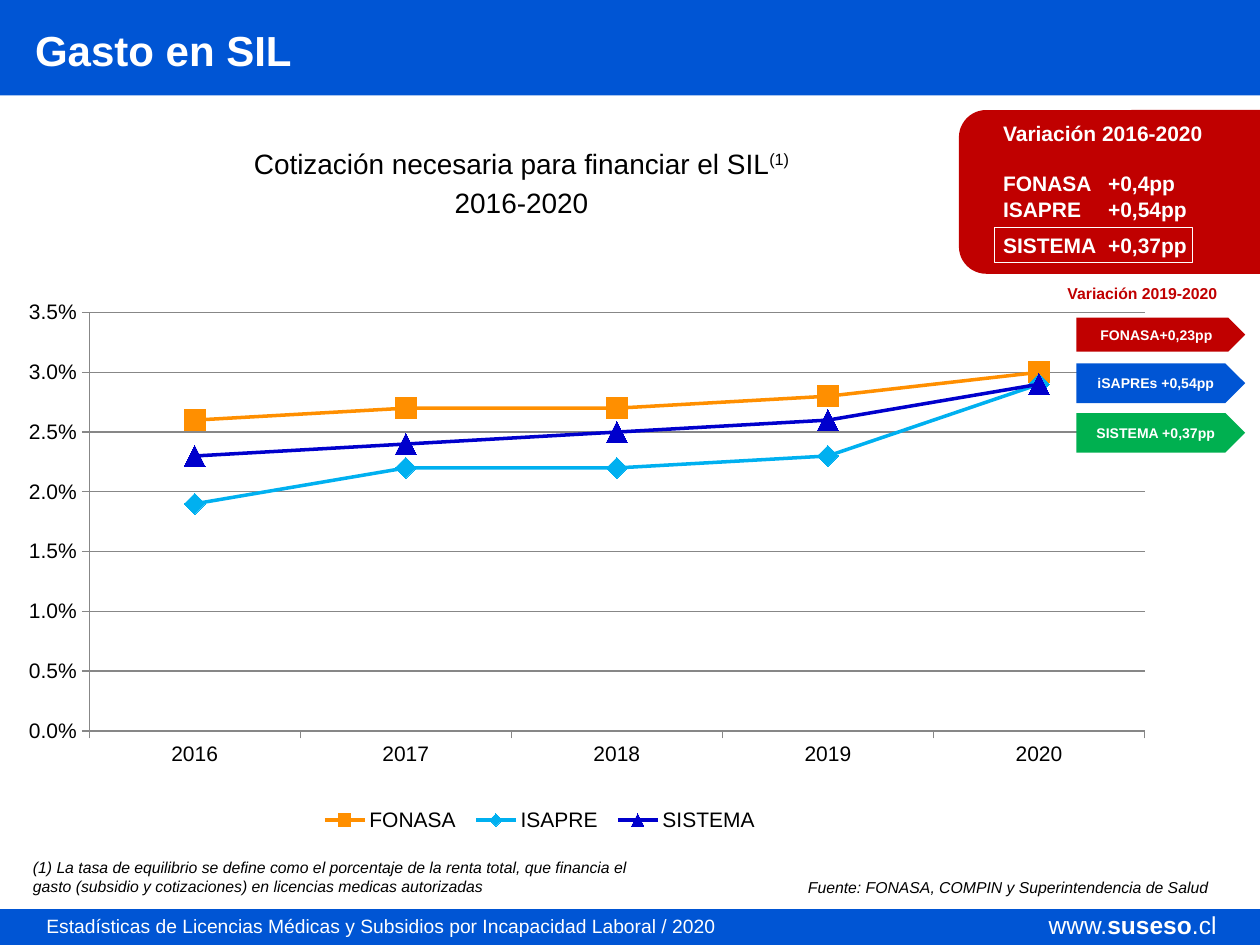
from dataclasses import dataclass

from lxml import etree
from pptx import Presentation
from pptx.chart.data import CategoryChartData
from pptx.dml.color import RGBColor
from pptx.enum.chart import XL_CHART_TYPE, XL_LEGEND_POSITION, XL_MARKER_STYLE, XL_TICK_MARK
from pptx.enum.shapes import MSO_SHAPE
from pptx.enum.text import MSO_ANCHOR, MSO_AUTO_SIZE, PP_ALIGN
from pptx.oxml.ns import qn
from pptx.util import Pt

LEFT, CENTER = PP_ALIGN.LEFT, PP_ALIGN.CENTER
TOP, MIDDLE = MSO_ANCHOR.TOP, MSO_ANCHOR.MIDDLE
RECTANGLE, PENTAGON = MSO_SHAPE.RECTANGLE, MSO_SHAPE.PENTAGON
ROUNDED_TOP = MSO_SHAPE.ROUND_2_SAME_RECTANGLE
SQUARE, DIAMOND, TRIANGLE = (
    XL_MARKER_STYLE.SQUARE, XL_MARKER_STYLE.DIAMOND, XL_MARKER_STYLE.TRIANGLE)

FONT = "Arial"
COLORS = {
    "blue": "0055D4", "red": "C00000", "green": "00B050",
    "white": "FFFFFF", "black": "000000", "grey": "878787",
    "orange": "FF8F00", "sky": "00B0F0", "navy": "0000CC",
}


@dataclass
class Box:
    left: float
    top: float
    width: float
    height: float

    def lengths(self):
        return Pt(self.left), Pt(self.top), Pt(self.width), Pt(self.height)


@dataclass
class Series:
    name: str
    color: str
    marker: object
    values: tuple


@dataclass
class Arrow:
    text: str
    color: str
    top: float
    height: float


SERIES = [
    Series("FONASA", "orange", SQUARE, (0.026, 0.027, 0.027, 0.028, 0.03)),
    Series("ISAPRE", "sky", DIAMOND, (0.019, 0.022, 0.022, 0.023, 0.029)),
    Series("SISTEMA", "navy", TRIANGLE, (0.023, 0.024, 0.025, 0.026, 0.029)),
]
ARROWS = [
    Arrow("FONASA+0,23pp", "red", 181.5, 19.5),
    Arrow("iSAPREs +0,54pp", "blue", 207.7, 22.6),
    Arrow("SISTEMA +0,37pp", "green", 236, 22.6),
]
VARIATIONS = [
    ("FONASA\t+0,4pp", 14, 0),
    ("ISAPRE\t+0,54pp", 0.5, 6),
    ("SISTEMA\t+0,37pp", 0, 0),
]


def rgb(name: str) -> RGBColor:
    return RGBColor.from_string(COLORS[name])


def write(paragraph, text: str, *, size=12, color="black", bold=False, italic=False,
          superscript=False, align=LEFT, before=0, after=0):
    paragraph.alignment = align
    paragraph.space_before, paragraph.space_after = Pt(before), Pt(after)
    run = paragraph.add_run()
    run.text = text
    font = run.font
    font.name, font.size, font.bold, font.italic = FONT, Pt(size), bold, italic
    font.color.rgb = rgb(color)
    if superscript:
        run._r.get_or_add_rPr().set("baseline", "30000")


def add_text_box(slide, box: Box):
    frame = slide.shapes.add_textbox(*box.lengths()).text_frame
    frame.word_wrap = True
    return frame


def place(placeholder, box: Box, anchor):
    placeholder.left, placeholder.top, placeholder.width, placeholder.height = box.lengths()
    frame = placeholder.text_frame
    frame.auto_size = MSO_AUTO_SIZE.NONE
    frame.vertical_anchor = anchor
    return frame


def add_shape(slide, kind, box: Box, fill=None, line=None):
    shape = slide.shapes.add_shape(kind, *box.lengths())
    shape.shadow.inherit = False
    if fill:
        shape.fill.solid()
        shape.fill.fore_color.rgb = rgb(fill)
    else:
        shape.fill.background()
    if line:
        shape.line.color.rgb = rgb(line)
        shape.line.width = Pt(0.5)
    else:
        shape.line.fill.background()
    return shape


def remove_bullet(paragraph):
    properties = paragraph._p.get_or_add_pPr()
    properties.set("marL", "0")
    properties.set("indent", "0")
    etree.SubElement(properties, qn("a:buNone"))


def add_tab(paragraph, position: float):
    tabs = etree.SubElement(paragraph._p.get_or_add_pPr(), qn("a:tabLst"))
    etree.SubElement(tabs, qn("a:tab"), pos=str(Pt(position)), algn="l")


def set_layout(parent, index: int, fractions: dict, inner=False):
    for existing in parent.findall(qn("c:layout")):
        parent.remove(existing)
    layout = etree.Element(qn("c:layout"))
    parent.insert(index, layout)
    manual = etree.SubElement(layout, qn("c:manualLayout"))
    if inner:
        etree.SubElement(manual, qn("c:layoutTarget"), val="inner")
    for mode in ("xMode", "yMode"):
        etree.SubElement(manual, qn(f"c:{mode}"), val="edge")
    for key, value in fractions.items():
        etree.SubElement(manual, qn(f"c:{key}"), val=str(value))


def add_line_chart(slide, box: Box):
    data = CategoryChartData(number_format="0.0%")
    data.categories = ["2016", "2017", "2018", "2019", "2020"]
    for item in SERIES:
        data.add_series(item.name, item.values)
    chart = slide.shapes.add_chart(XL_CHART_TYPE.LINE_MARKERS, *box.lengths(), data).chart
    chart.font.name, chart.font.size = FONT, Pt(12)
    chart.font.color.rgb = rgb("black")
    chart.has_title = False
    chart.has_legend = True
    chart.legend.position = XL_LEGEND_POSITION.BOTTOM
    chart.legend.include_in_layout = False
    chart.plots[0].vary_by_categories = False

    value_axis = chart.value_axis
    value_axis.minimum_scale, value_axis.maximum_scale = 0, 0.035
    value_axis.major_unit = 0.005
    value_axis.tick_labels.number_format = "0.0%"
    value_axis.tick_labels.number_format_is_linked = False
    value_axis.has_major_gridlines = True
    for axis in (chart.category_axis, value_axis):
        axis.major_tick_mark = XL_TICK_MARK.OUTSIDE
    for line in (value_axis.major_gridlines.format.line, value_axis.format.line,
                 chart.category_axis.format.line):
        line.color.rgb = rgb("grey")
        line.width = Pt(0.75)

    for series, item in zip(chart.plots[0].series, SERIES):
        series.smooth = False
        series.format.line.color.rgb = rgb(item.color)
        series.format.line.width = Pt(2)
        series.marker.style, series.marker.size = item.marker, 12
        series.marker.format.fill.solid()
        series.marker.format.fill.fore_color.rgb = rgb(item.color)
        series.marker.format.line.fill.background()

    root = chart.element
    set_layout(root.find(".//" + qn("c:plotArea")), 0,
               {"x": 0.055, "y": 0.044, "w": 0.925, "h": 0.743}, inner=True)
    set_layout(root.find(".//" + qn("c:legend")), 1,
               {"x": 0.25, "y": 0.91, "w": 0.4, "h": 0.07})


def main():
    presentation = Presentation()
    presentation.slide_width, presentation.slide_height = Pt(720), Pt(540)
    slide = presentation.slides.add_slide(presentation.slide_layouts[1])
    title, body = slide.shapes.title, slide.placeholders[1]

    subtitle = place(body, Box(11.8, 80, 572.4, 54.7), TOP)
    first, second = subtitle.paragraphs[0], subtitle.add_paragraph()
    for paragraph in (first, second):
        remove_bullet(paragraph)
    write(first, "Cotización necesaria para financiar el SIL", size=16, align=CENTER)
    write(first, "(1)", size=16, align=CENTER, superscript=True)
    write(second, "2016-2020", size=16, align=CENTER, before=3.2)

    for text, box, style in (
        ("Variación 2019-2020", Box(602.9, 158.4, 121, 17.3), {"color": "red", "bold": True}),
        ("(1) La tasa de equilibrio se define como el porcentaje de la renta total, que financia "
         "el gasto (subsidio y cotizaciones) en licencias medicas autorizadas",
         Box(11.7, 486.7, 370.8, 37.4), {"italic": True}),
        ("Fuente: FONASA, COMPIN y Superintendencia de Salud",
         Box(454.6, 497.9, 265, 20), {"italic": True}),
    ):
        write(add_text_box(slide, box).paragraphs[0], text, size=9, **style)

    add_line_chart(slide, Box(15.1, 164.5, 652, 321.8))

    for arrow in ARROWS:
        shape = add_shape(slide, PENTAGON, Box(615.1, arrow.top, 96.5, arrow.height), arrow.color)
        frame = shape.text_frame
        frame.vertical_anchor = MIDDLE
        frame.margin_top = frame.margin_bottom = 0
        write(frame.paragraphs[0], arrow.text, size=8, color="white", bold=True, align=CENTER)

    add_shape(slide, RECTANGLE, Box(0, 0, 720, 54.5), "blue")
    title_frame = place(title, Box(12.8, 7, 608.4, 42.5), MIDDLE)
    write(title_frame.paragraphs[0], "Gasto en SIL", size=24, color="white", bold=True)
    slide.shapes.element.append(title.element)

    panel = add_shape(slide, ROUNDED_TOP, Box(587.2, 23.6, 93.6, 172.1), "red")
    panel.rotation = 270
    frame = add_text_box(slide, Box(566.1, 65.5, 150, 90))
    write(frame.paragraphs[0], "Variación 2016-2020", color="white", bold=True)
    for text, before, after in VARIATIONS:
        paragraph = frame.add_paragraph()
        add_tab(paragraph, 60)
        write(paragraph, text, color="white", bold=True, before=before, after=after)
    add_shape(slide, RECTANGLE, Box(568.3, 130.1, 113, 19.8), line="white")

    add_shape(slide, RECTANGLE, Box(0, 519.6, 720, 20.4), "blue")
    footer = add_text_box(slide, Box(19.4, 518.9, 566.6, 20.9))
    write(footer.paragraphs[0],
          "Estadísticas de Licencias Médicas y Subsidios por Incapacidad Laboral / 2020",
          size=11, color="white")
    address = add_text_box(slide, Box(588.5, 516.7, 117.4, 23)).paragraphs[0]
    for text, bold in (("www.", False), ("suseso", True), (".cl", False)):
        write(address, text, size=14, color="white", bold=bold, align=CENTER)

    presentation.save("out.pptx")


if __name__ == "__main__":
    main()
